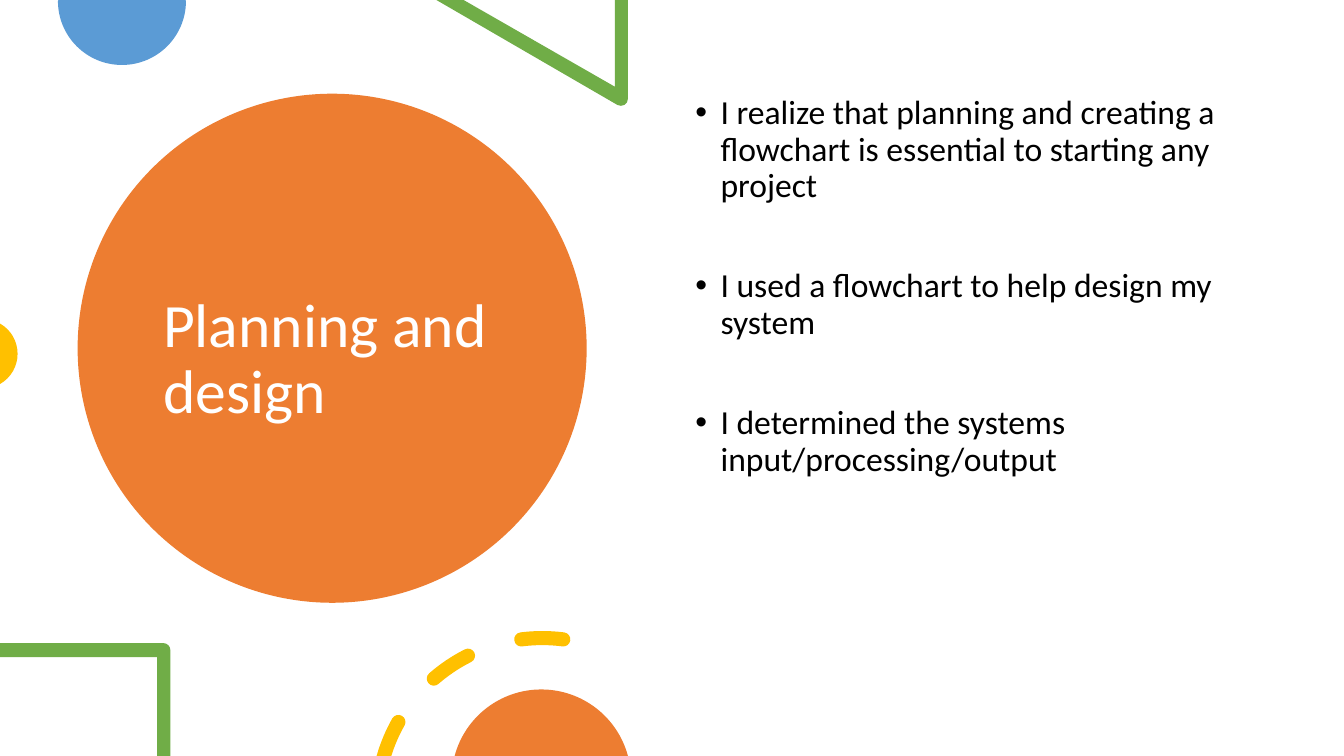
import math
from lxml import etree
from pptx import Presentation, util as u
from pptx.dml.color import RGBColor
from pptx.enum import shapes, text
from pptx.oxml.ns import qn

PX = 9144
WIDE, HIGH = 1333, 750
FONT = "Calibri"
HUES = {"orange": "ED7D31", "blue": "5B9BD5", "green": "70AD47",
        "gold": "FFC000", "white": "FFFFFF", "black": "000000"}
TITLE = "Planning and design"
POINTS = [
    "I realize that planning and creating a flowchart is essential to starting any project",
    "I used a flowchart to help design my system",
    "I determined the systems input/processing/output",
]


def hue(name):
    return RGBColor.from_string(HUES[name])


def paint(shape, name):
    shape.shadow.inherit = False
    shape.fill.solid()
    shape.fill.fore_color.rgb = hue(name)
    shape.line.fill.background()


def arc(x, y, r, start, end, parts=1):
    step = math.radians(end - start) / parts
    pull = 4 / 3 * math.tan(step / 4)
    steps = [(x + r * math.cos(math.radians(start)),
              y + r * math.sin(math.radians(start)))]
    for i in range(parts):
        a = math.radians(start) + step * i
        b = a + step
        ca, sa, cb, sb = math.cos(a), math.sin(a), math.cos(b), math.sin(b)
        steps.append((x + r * (ca - pull * sa), y + r * (sa + pull * ca),
                      x + r * (cb + pull * sb), y + r * (sb - pull * cb),
                      x + r * cb, y + r * sb))
    return steps


def bend(shape, loops):
    lines = iter(list(shape._element.iter(qn("a:lnTo"))))
    for loop in loops:
        for step in loop[1:]:
            group = [next(lines) for _ in range(len(step) // 2)]
            if len(group) == 3:
                curve = etree.Element(qn("a:cubicBezTo"))
                group[0].addprevious(curve)
                for line in group:
                    curve.append(line[0])
                    line.getparent().remove(line)


def outline(slide, name, *loops):
    pen = None
    for loop in loops:
        dots = [(round(step[i] * PX), round(step[i + 1] * PX))
                for step in loop for i in range(0, len(step), 2)]
        if pen is None:
            pen = slide.shapes.build_freeform(*dots[0])
        else:
            pen.move_to(*dots[0])
        pen.add_line_segments(dots[1:], close=True)
    shape = pen.convert_to_shape()
    bend(shape, loops)
    paint(shape, name)


def write(slide, box, lines, size, name, anchor):
    frame = slide.shapes.add_textbox(*(n * PX for n in box)).text_frame
    frame.word_wrap = True
    frame.vertical_anchor = anchor
    for i, line in enumerate(lines):
        para = frame.add_paragraph() if i else frame.paragraphs[0]
        para.text = line
        para.line_spacing = 0.9
        para.font.name = FONT
        para.font.size = u.Pt(size)
        para.font.color.rgb = hue(name)
    return frame.paragraphs


def title(slide, box):
    x, y, w, h = box
    disc = slide.shapes.add_shape(shapes.MSO_SHAPE.OVAL, *(n * PX for n in box))
    paint(disc, "orange")
    write(slide, (x + 75, y + 42, w - 151, h - 60), [TITLE], 44, "white",
          text.MSO_ANCHOR.MIDDLE)


def body(slide, box):
    paras = write(slide, box, POINTS, 24, "black", text.MSO_ANCHOR.TOP)
    for i, para in enumerate(paras):
        para.space_before = u.Pt(46 if i else 10)
        props = para._p.get_or_add_pPr()
        props.set("marL", str(38 * PX))
        props.set("indent", str(-25 * PX))
        rest = props.find(qn("a:defRPr"))
        rest.addprevious(etree.Element(qn("a:buFont"), typeface="Arial"))
        rest.addprevious(etree.Element(qn("a:buChar"), char="•"))


def edges(slide, box):
    x, y, w, h = box
    base = y + h
    outline(slide, "blue", [(x + 184, y), (x + 58, y)]
            + arc(x + 121, y + 1, 63.5, 180, 0, 2))
    outline(slide, "green", [(x + 623, y), (x + 610, y), (x + 610, y + 86),
                             (x + 460, y), (x + 433, y)]
            + arc(x + 616, y + 98, 7, 120, 0, 2))
    outline(slide, "gold", arc(x - 17, y + 351, 34.5, -60, 60, 2))
    outline(slide, "green", [(x, base - 112), (x, base - 98), (x + 156, base - 98),
                             (x + 156, base), (x + 169, base)]
            + arc(x + 162, base - 105, 7, 0, -90))


def ring(slide, x, base):
    y, r, half = base + 47, 164, 7

    def cap(turn, start):
        t = math.radians(turn)
        return arc(x + r * math.cos(t), y + r * math.sin(t), half,
                   start, start + 180, 2)[1:]

    def dash(start, end):
        return (arc(x, y, r + half, start, end) + cap(end, end)
                + arc(x, y, r - half, end, start)[1:] + cap(start, start + 180))

    low = (arc(x, y, r + half, 196, 209.5) + cap(209.5, 209.5)
           + arc(x, y, r - half, 209.5, 197.4)[1:])
    outline(slide, "gold", low, dash(229, 243.3), dash(262.7, 277.3))
    outline(slide, "orange", arc(x - 1, base + 23, 89, 195, 345, 2))


def main():
    deck = Presentation()
    deck.slide_width, deck.slide_height = u.Inches(40 / 3), HIGH * PX
    slide = deck.slides.add_slide(deck.slide_layouts[6])
    title(slide, (77, 93, 505, 505))
    edges(slide, (0, 0, WIDE, HIGH))
    body(slide, (667, 90, 575, 535))
    ring(slide, 538, HIGH)
    deck.save("out.pptx")


if __name__ == "__main__":
    main()
